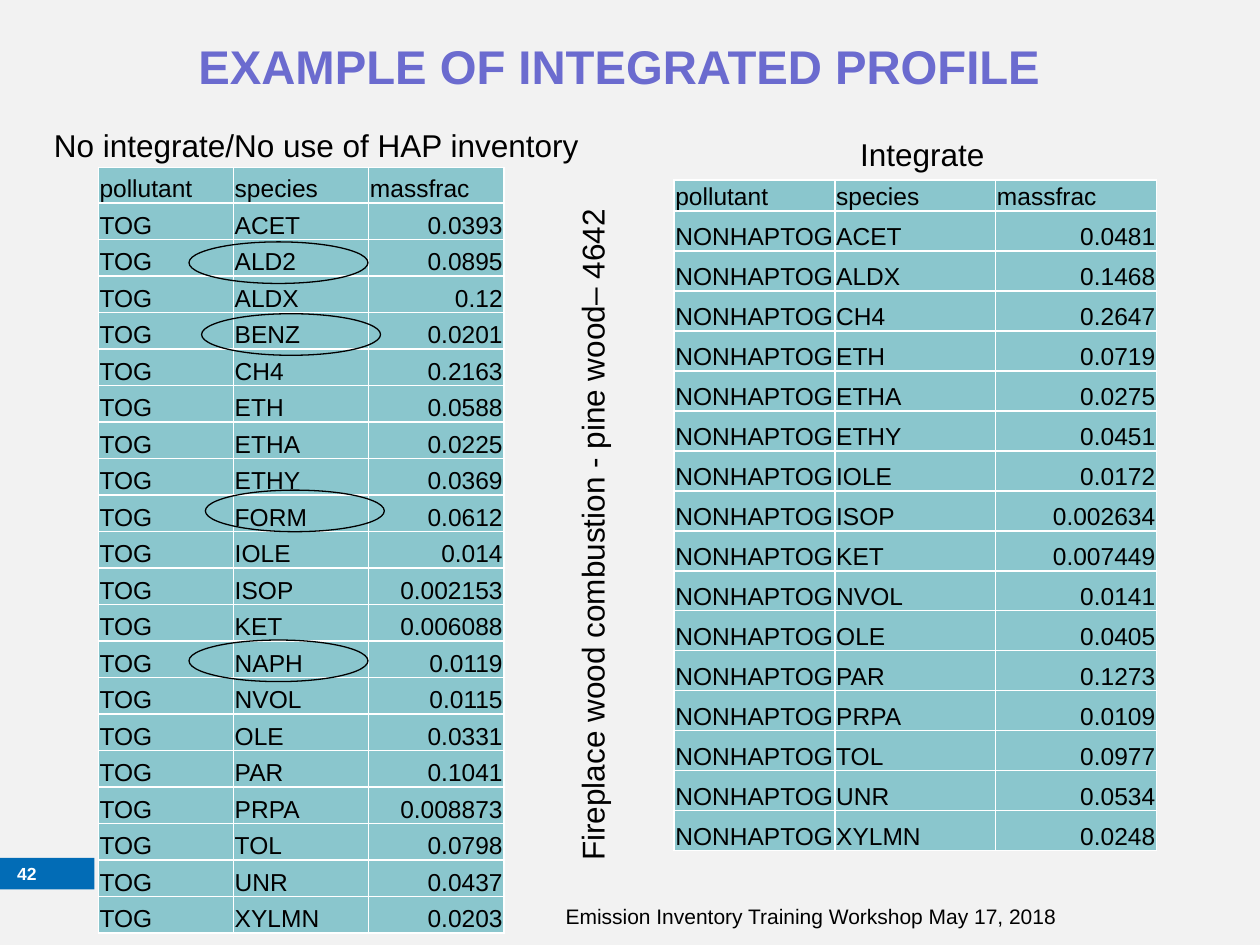
from dataclasses import dataclass

from lxml import etree
from pptx import Presentation
from pptx.dml.color import RGBColor
from pptx.enum.shapes import MSO_SHAPE
from pptx.enum.text import MSO_ANCHOR, MSO_AUTO_SIZE, PP_ALIGN
from pptx.oxml.ns import qn
from pptx.util import Inches, Pt

LEFT, CENTER, RIGHT = PP_ALIGN.LEFT, PP_ALIGN.CENTER, PP_ALIGN.RIGHT
MIDDLE, BOTTOM = MSO_ANCHOR.MIDDLE, MSO_ANCHOR.BOTTOM
RECT, OVAL = MSO_SHAPE.RECTANGLE, MSO_SHAPE.OVAL
GROW, FIXED = MSO_AUTO_SIZE.SHAPE_TO_FIT_TEXT, MSO_AUTO_SIZE.NONE


@dataclass
class Theme:
    font: str = "Arial"
    page: RGBColor = RGBColor(0xF2, 0xF2, 0xF2)
    bar: RGBColor = RGBColor(0x02, 0x6C, 0xB6)
    title: RGBColor = RGBColor(0x6B, 0x6B, 0xCF)
    cell: RGBColor = RGBColor(0x8A, 0xC6, 0xCD)
    ink: RGBColor = RGBColor(0, 0, 0)
    white: RGBColor = RGBColor(255, 255, 255)
    head_size: int = 27
    label_size: int = 18
    cell_size: int = 14
    foot_size: int = 12
    page_size: int = 10


theme = Theme()
deck = Presentation()
deck.slide_width, deck.slide_height = Inches(10), Inches(7.5)


def share(x, y, w, h):
    """Turn percentages of the slide's size into lengths."""
    wide, high = deck.slide_width, deck.slide_height
    return [int(p * side / 100) for p, side in zip((x, y, w, h), (wide, high) * 2)]


def write(frame, text, size, color=theme.ink, align=LEFT, bold=False):
    para = frame.paragraphs[0]
    para.alignment = align
    run = para.add_run()
    run.text = text
    font = run.font
    font.name, font.size, font.bold = theme.font, Pt(size), bold
    font.color.rgb = color


slide = deck.slides.add_slide(deck.slide_layouts[5])
slide.background.fill.solid()
slide.background.fill.fore_color.rgb = theme.page

title = slide.shapes.title
title.left, title.top, title.width, title.height = share(0, 2.93, 98.3, 8.13)
title.text_frame.vertical_anchor = MIDDLE
title.text_frame.auto_size = FIXED
write(title.text_frame, "EXAMPLE OF INTEGRATED PROFILE", theme.head_size,
      theme.title, CENTER, True)

# Page number on its bar
bar = slide.shapes.add_shape(RECT, *share(0, 90.8, 7.5, 3.33))
bar.shadow.inherit = False
bar.fill.solid()
bar.fill.fore_color.rgb = theme.bar
bar.line.fill.background()
number = slide.shapes.add_textbox(*share(-3.8, 90.8, 6.7, 3.33)).text_frame
number.margin_left = number.margin_right = number.margin_top = number.margin_bottom = 0
number.vertical_anchor = MIDDLE
number.word_wrap = True
write(number, "42", theme.page_size, theme.white, RIGHT, True)

# Labels: text, place, alignment, turn
labels = [
    ("No integrate/No use of HAP inventory", (3.3, 12.67, 44.1, 5.33), LEFT, 0),
    ("Integrate", (66.7, 13.6, 13, 5.33), CENTER, 0),
    ("Fireplace wood combustion - pine wood– 4642", (19.9, 53.6, 54.2, 5.33), LEFT, 270),
]
for text, place, align, turn in labels:
    label = slide.shapes.add_textbox(*share(*place))
    label.rotation = turn
    label.text_frame.word_wrap = False
    label.text_frame.auto_size = GROW
    write(label.text_frame, text, theme.label_size, align=align)

# Tables: pollutant, place, header height, species with mass fractions
whole = """ACET 0.0393 ALD2 0.0895 ALDX 0.12 BENZ 0.0201 CH4 0.2163 ETH 0.0588
    ETHA 0.0225 ETHY 0.0369 FORM 0.0612 IOLE 0.014 ISOP 0.002153 KET 0.006088
    NAPH 0.0119 NVOL 0.0115 OLE 0.0331 PAR 0.1041 PRPA 0.008873 TOL 0.0798
    UNR 0.0437 XYLMN 0.0203""".split()
partial = """ACET 0.0481 ALDX 0.1468 CH4 0.2647 ETH 0.0719 ETHA 0.0275 ETHY 0.0451
    IOLE 0.0172 ISOP 0.002634 KET 0.007449 NVOL 0.0141 OLE 0.0405 PAR 0.1273
    PRPA 0.0109 TOL 0.0977 UNR 0.0534 XYLMN 0.0248""".split()
tables = [
    ("TOG", (7.8, 17.73, 32.2, 81.07), 0.28, whole),
    ("NONHAPTOG", (53.5, 19.07, 38.3, 70.8), 0.23, partial),
]
for name, place, head, data in tables:
    rows = [("pollutant", "species", "massfrac")]
    rows += [(name, kind, part) for kind, part in zip(data[::2], data[1::2])]
    x, y, w, h = share(*place)
    table = slide.shapes.add_table(len(rows), 3, x, y, w, h).table
    table.first_row = table.horz_banding = False
    for col in table.columns:
        col.width = w // 3
    for r, row in enumerate(rows):
        table.rows[r].height = (h - Inches(head)) // (len(rows) - 1) if r else Inches(head)
        for c, text in enumerate(row):
            cell = table.cell(r, c)
            cell.margin_left = cell.margin_right = cell.margin_top = Inches(0.01)
            cell.margin_bottom = 0
            cell.vertical_anchor = BOTTOM
            write(cell.text_frame, text, theme.cell_size,
                  align=RIGHT if r and c == 2 else LEFT)
            props = cell._tc.get_or_add_tcPr()
            for side in ("a:lnL", "a:lnR", "a:lnT", "a:lnB"):
                edge = etree.SubElement(props, qn(side), w=str(Pt(1)))
                fill = etree.SubElement(edge, qn("a:solidFill"))
                etree.SubElement(fill, qn("a:srgbClr"), val=str(theme.white))
            cell.fill.solid()
            cell.fill.fore_color.rgb = theme.cell

# Rings around ALD2, NAPH, FORM and BENZ
for x, y in [(15, 25.6), (15, 67.73), (16.3, 51.87), (16, 33.2)]:
    ring = slide.shapes.add_shape(OVAL, *share(x, y, 14.2, 4.4))
    ring.shadow.inherit = False
    ring.fill.background()
    ring.line.color.rgb = theme.ink
    ring.line.width = Pt(0.75)

foot = slide.shapes.add_textbox(*share(43.9, 94.93, 67.5, 6.67)).text_frame
foot.word_wrap = True
write(foot, "Emission Inventory Training Workshop May 17, 2018", theme.foot_size)

deck.save("out.pptx")
